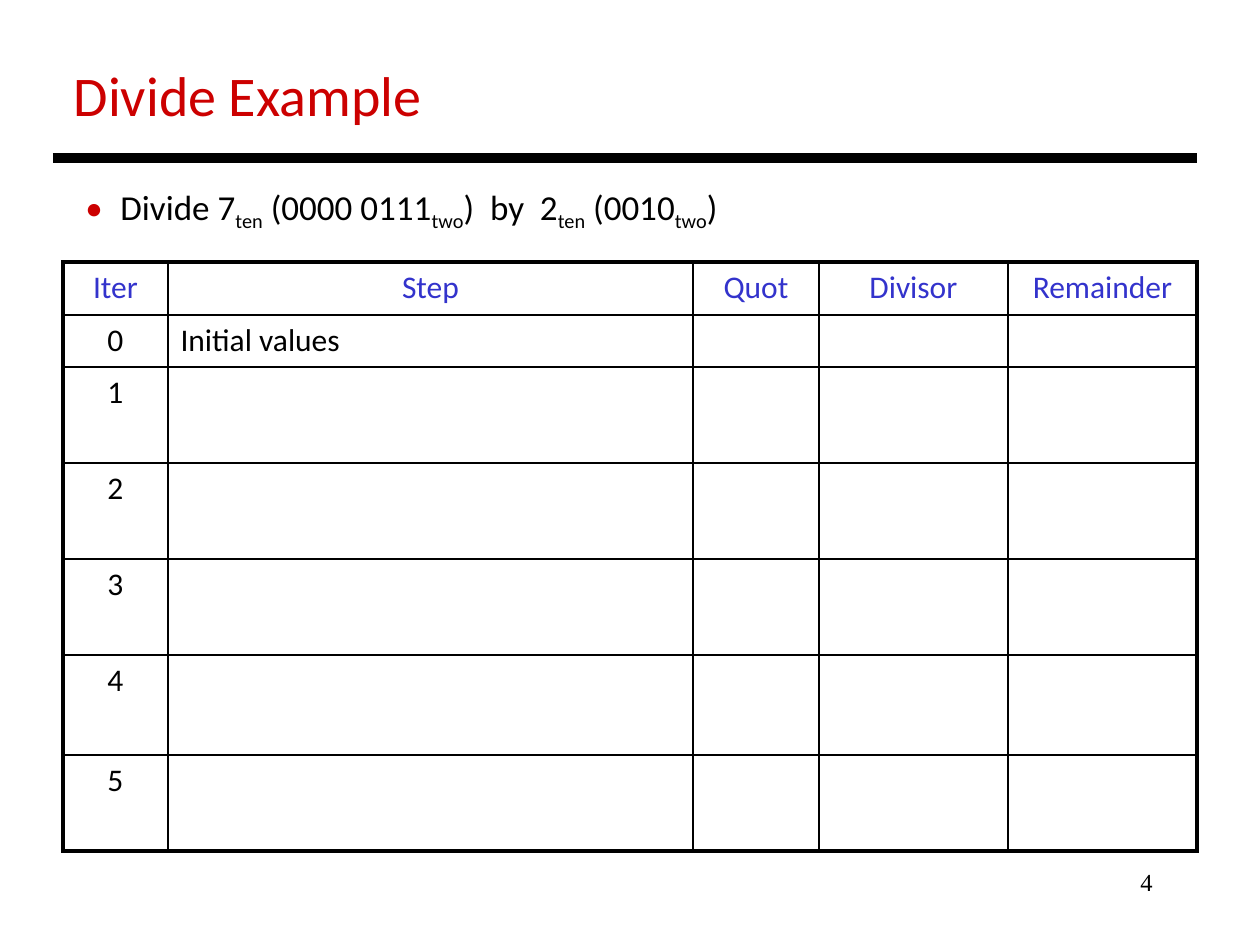
from lxml import etree
from pptx import Presentation
from pptx import util as u
from pptx.dml.color import RGBColor
from pptx.enum import shapes, text
from pptx.oxml import ns

BLACK = RGBColor(0x00, 0x00, 0x00)
RED = RGBColor(0xCC, 0x00, 0x00)
BLUE = RGBColor(0x33, 0x33, 0xCC)

HEADERS = ["Iter", "Step", "Quot", "Divisor", "Remainder"]
STEPS = [[str(i), "Initial values" if i == 0 else "", "", "", ""] for i in range(6)]
COL_WIDTHS = [105, 525, 126, 189, 189]
ROW_HEIGHTS = [53, 52, 96, 96, 96, 100, 96]
# Each pair is plain text followed by its subscript.
TASK = [("Divide 7", "ten"), (" (0000 0111", "two"), (")  by  2", "ten"),
        (" (0010", "two"), (")", "")]


def px(n):
    return u.Emu(round(n * 914400 / 126))


def add_xml(parent, tag, **attrs):
    return etree.SubElement(parent, ns.qn(tag), attrs)


class Deck:
    font = "Calibri"
    thin, thick = 1, 2.25

    def __init__(self, width, height):
        self.prs = Presentation()
        self.prs.slide_width, self.prs.slide_height = px(width), px(height)
        self.s = self.prs.slides.add_slide(self.prs.slide_layouts[5])

    def style(self, p, size, color, align=text.PP_ALIGN.LEFT, font=None):
        p.alignment = align
        p.font.size = u.Pt(size)
        for r in p.runs:
            r.font.name = font or self.font
            r.font.size = u.Pt(size)
            r.font.color.rgb = color

    def title(self, words, x, y, w, h):
        sp = self.s.shapes.title
        sp.left, sp.top, sp.width, sp.height = map(px, (x, y, w, h))
        tf = sp.text_frame
        tf.text = words
        tf.word_wrap = False
        tf.auto_size = text.MSO_AUTO_SIZE.NONE
        tf.vertical_anchor = text.MSO_ANCHOR.TOP
        self.style(tf.paragraphs[0], 32, RED)

    def text_box(self, x, y, w, h, words=""):
        tf = self.s.shapes.add_textbox(*map(px, (x, y, w, h))).text_frame
        tf.word_wrap = True
        tf.text = words
        return tf.paragraphs[0]

    def bullet(self, pieces, x, y, w, h, indent):
        p = self.text_box(x, y, w, h)
        pPr = p._p.get_or_add_pPr()
        pPr.set("marL", str(px(indent)))
        pPr.set("indent", str(-px(indent)))
        add_xml(add_xml(pPr, "a:buClr"), "a:srgbClr", val=str(RED))
        add_xml(pPr, "a:buFont", typeface=self.font)
        add_xml(pPr, "a:buChar", char="•")
        for plain, subscript in pieces:
            p.add_run().text = plain
            if subscript:
                r = p.add_run()
                r.text = subscript
                r.font._element.set("baseline", "-25000")
        self.style(p, 20, BLACK)

    def rule(self, x1, x2, y, weight):
        c = self.s.shapes.add_connector(shapes.MSO_CONNECTOR.STRAIGHT,
                                        px(x1), px(y), px(x2), px(y))
        c.line.color.rgb = BLACK
        c.line.width = u.Pt(weight)
        add_xml(c._element.spPr, "a:effectLst")

    def borders(self, cell, outer):
        """Draw the four sides, thick where outer maps the side to True."""
        tcPr = cell._tc.get_or_add_tcPr()
        for side, is_outer in outer.items():
            weight = self.thick if is_outer else self.thin
            ln = add_xml(tcPr, f"a:ln{side}", w=str(u.Pt(weight)))
            add_xml(add_xml(ln, "a:solidFill"), "a:srgbClr", val=str(BLACK))

    def table(self, rows, x, y, widths, heights):
        last_row, last_col = len(rows) - 1, len(widths) - 1
        t = self.s.shapes.add_table(len(rows), len(widths), px(x), px(y),
                                    px(sum(widths)), px(sum(heights))).table
        t.first_row = t.horz_banding = False
        for col, width in zip(t.columns, widths):
            col.width = px(width)
        for row, height in zip(t.rows, heights):
            row.height = px(height)
        for i, row in enumerate(rows):
            for j, words in enumerate(row):
                cell = t.cell(i, j)
                cell.text = words
                left = i > 0 and j == 1
                self.style(cell.text_frame.paragraphs[0], 18, BLACK if i else BLUE,
                           text.PP_ALIGN.LEFT if left else text.PP_ALIGN.CENTER)
                self.borders(cell, {"L": j == 0, "R": j == last_col,
                                    "T": i == 0, "B": i == last_row})
                cell.fill.background()

    def page_number(self, number, x, y, w, h):
        p = self.text_box(x, y, w, h, str(number))
        self.style(p, 14, BLACK, text.PP_ALIGN.RIGHT, "Times New Roman")


def main():
    deck = Deck(1260, 945)
    deck.page_number(4, 903, 861, 262, 63)
    deck.title("Divide Example", 61, 54, 377, 81)
    deck.rule(53, 1197, 158, 6)
    deck.bullet(TASK, 73, 179, 670, 55, indent=35)
    deck.table([HEADERS] + STEPS, 63, 262, COL_WIDTHS, ROW_HEIGHTS)
    deck.prs.save("out.pptx")


if __name__ == "__main__":
    main()
